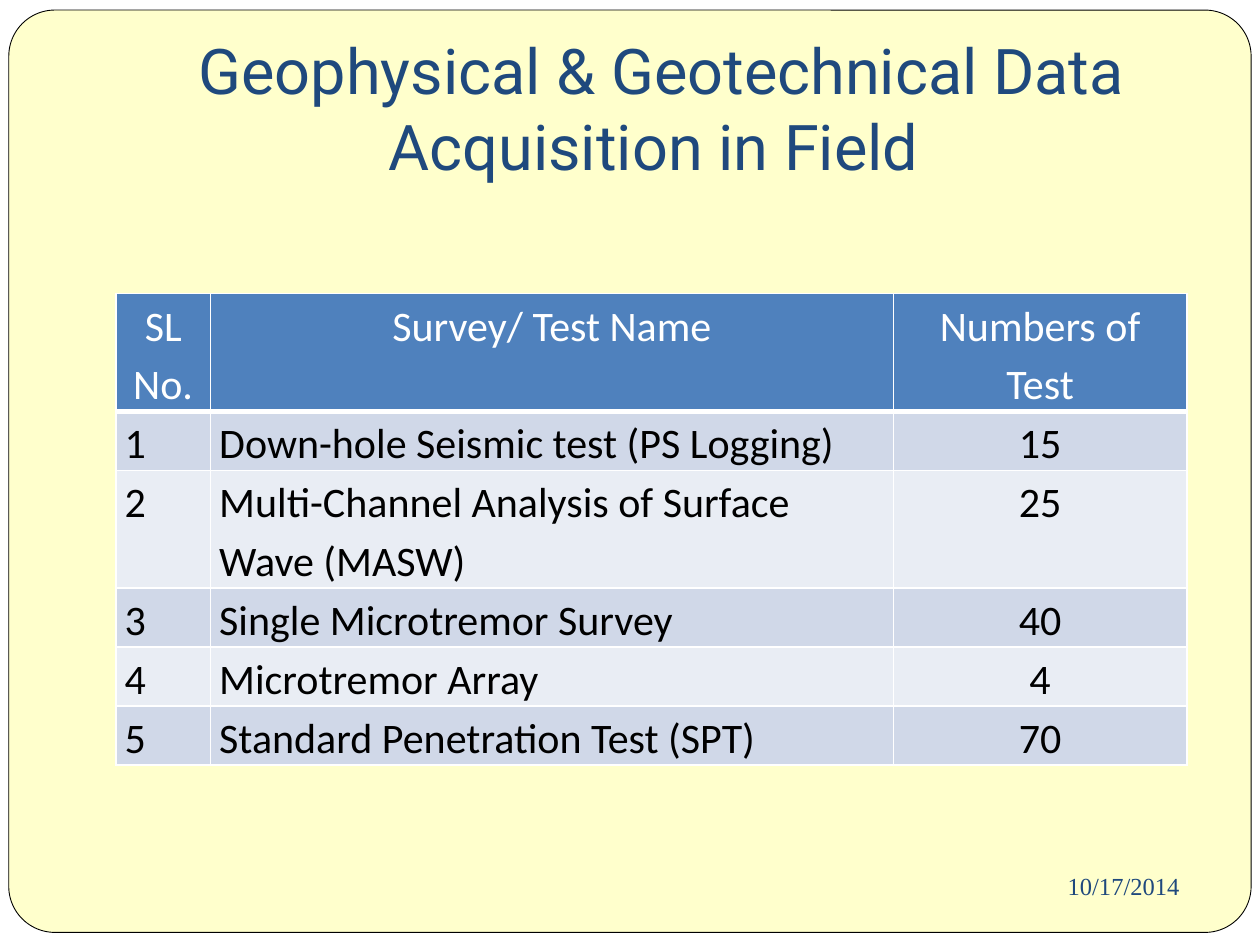
from dataclasses import dataclass

from lxml import etree
from pptx import Presentation
from pptx.dml.color import RGBColor
from pptx.enum.shapes import MSO_SHAPE
from pptx.enum.text import MSO_ANCHOR, PP_ALIGN
from pptx.oxml.ns import qn
from pptx.util import Inches, Pt

WHITE = RGBColor(0xFF, 0xFF, 0xFF)
BLACK = RGBColor(0x00, 0x00, 0x00)
CREAM = RGBColor(0xFF, 0xFF, 0xCC)
NAVY = RGBColor(0x1F, 0x49, 0x7D)
HEADER_BLUE = RGBColor(0x4F, 0x81, 0xBD)
BANDS = (RGBColor(0xD0, 0xD8, 0xE8), RGBColor(0xE9, 0xED, 0xF4))

SLIDE_W, SLIDE_H = Inches(10), Inches(7.5)
ROW_H = Inches(0.41)


@dataclass(frozen=True)
class Column:
    heading: str
    width: float
    align: PP_ALIGN


@dataclass(frozen=True)
class Survey:
    name: str
    tests: int


COLUMNS = (
    Column("SL No.", 0.75, PP_ALIGN.LEFT),
    Column("Survey/ Test Name", 5.42, PP_ALIGN.LEFT),
    Column("Numbers of Test", 2.33, PP_ALIGN.CENTER),
)
SURVEYS = (
    Survey("Down-hole Seismic test (PS Logging)", 15),
    Survey("Multi-Channel Analysis of Surface Wave (MASW)", 25),
    Survey("Single Microtremor Survey", 40),
    Survey("Microtremor Array", 4),
    Survey("Standard Penetration Test (SPT)", 70),
)


def write(frame, text: str, font: str, size: float, color: RGBColor, align: PP_ALIGN):
    """Fill the first paragraph with one formatted run and return it."""
    paragraph = frame.paragraphs[0]
    paragraph.alignment = align
    run = paragraph.add_run()
    run.text = text
    run.font.name = font
    run.font.size = Pt(size)
    run.font.bold = False
    run.font.color.rgb = color
    return paragraph


def add_panel(slide, preset, left, top, width, height, fill: RGBColor):
    panel = slide.shapes.add_shape(preset, left, top, width, height)
    panel.shadow.inherit = False
    panel.fill.solid()
    panel.fill.fore_color.rgb = fill
    panel.line.fill.background()
    return panel


def add_backdrop(slide) -> None:
    add_panel(slide, MSO_SHAPE.RECTANGLE, 0, 0, SLIDE_W, SLIDE_H, WHITE)
    card = add_panel(slide, MSO_SHAPE.ROUNDED_RECTANGLE, Inches(0.07), Inches(0.08),
                     Inches(9.86), Inches(7.32), CREAM)
    card.adjustments[0] = 0.05
    card.line.color.rgb = BLACK
    card.line.width = Pt(0.5)


def place_title(slide) -> None:
    title = slide.shapes.title
    slide.shapes._spTree.append(title._element)  # in front of the backdrop
    title.left, title.top = Inches(1), Inches(0.3)
    title.width, title.height = Inches(8.5), Inches(1.25)
    frame = title.text_frame
    frame.vertical_anchor = MSO_ANCHOR.BOTTOM
    frame.margin_bottom = Inches(0.1)
    write(frame, "Geophysical & Geotechnical Data Acquisition in Field ",
          "Roboto", 36, NAVY, PP_ALIGN.CENTER)


def set_borders(cell, **widths: float) -> None:
    """Draw white borders; widths are points keyed by side, in L, R, T, B order."""
    properties = cell._tc.get_or_add_tcPr()
    for side, width in widths.items():
        line = etree.SubElement(properties, qn(f"a:ln{side}"), w=str(Pt(width)))
        fill = etree.SubElement(line, qn("a:solidFill"))
        etree.SubElement(fill, qn("a:srgbClr"), val=str(WHITE))


def fill_cell(cell, text: str, row: int, align: PP_ALIGN) -> None:
    is_header = row == 0
    set_borders(cell, L=1, R=1, T=3 if row == 1 else 1, B=3 if is_header else 1)
    cell.fill.solid()
    cell.fill.fore_color.rgb = HEADER_BLUE if is_header else BANDS[(row - 1) % 2]
    cell.margin_left = cell.margin_right = Inches(0.07)
    cell.margin_top = cell.margin_bottom = 0
    paragraph = write(cell.text_frame, text, "Calibri", 24,
                      WHITE if is_header else BLACK,
                      PP_ALIGN.CENTER if is_header else align)
    paragraph.line_spacing = 1.15


def add_survey_table(slide) -> None:
    rows = [[column.heading for column in COLUMNS]]
    rows += [[str(number), survey.name, str(survey.tests)]
             for number, survey in enumerate(SURVEYS, start=1)]
    table = slide.shapes.add_table(len(rows), len(COLUMNS), Inches(0.92), Inches(2.33),
                                   Inches(8.5), ROW_H * len(rows)).table
    for index, column in enumerate(COLUMNS):
        table.columns[index].width = Inches(column.width)
    for r, texts in enumerate(rows):
        for c, text in enumerate(texts):
            fill_cell(table.cell(r, c), text, r, COLUMNS[c].align)


def add_date(slide) -> None:
    date = slide.shapes.add_textbox(Inches(6.75), Inches(6.77), Inches(2.71), Inches(0.52))
    frame = date.text_frame
    frame.word_wrap = True
    frame.vertical_anchor = MSO_ANCHOR.MIDDLE
    write(frame, "10/17/2014", "Times New Roman", 14, NAVY, PP_ALIGN.RIGHT)


def main() -> None:
    deck = Presentation()
    deck.slide_width, deck.slide_height = SLIDE_W, SLIDE_H
    slide = deck.slides.add_slide(deck.slide_layouts[5])
    slide.background.fill.solid()
    slide.background.fill.fore_color.rgb = CREAM
    add_backdrop(slide)
    place_title(slide)
    add_survey_table(slide)
    add_date(slide)
    deck.save("out.pptx")


if __name__ == "__main__":
    main()
